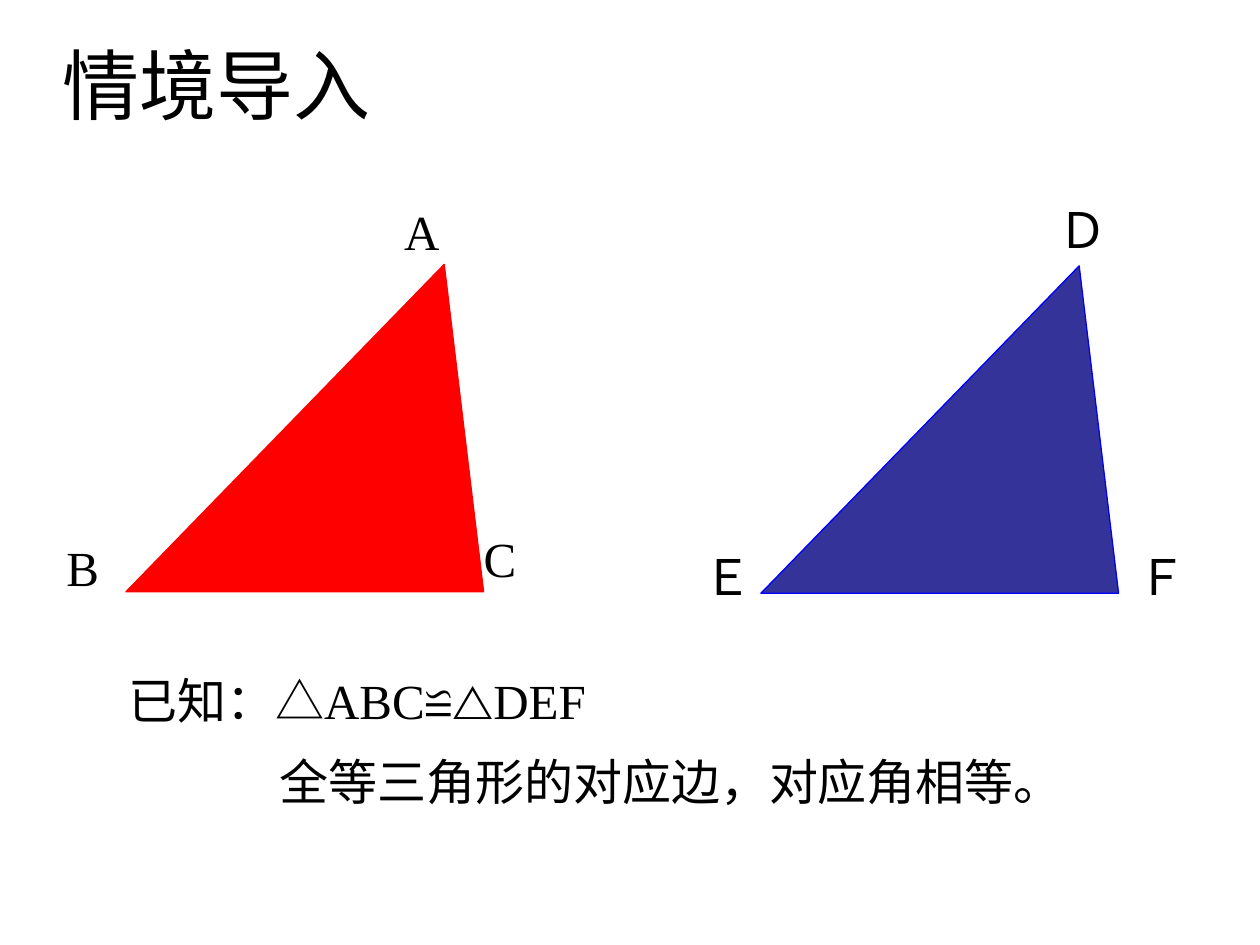
"""Build the lesson-opening slide on the congruent triangles ABC and DEF."""
from pptx import Presentation
from pptx import util as u
from pptx.dml.color import RGBColor
from pptx.enum import shapes, text

BLACK = RGBColor(0x00, 0x00, 0x00)
RED = RGBColor(0xFF, 0x00, 0x00)
INDIGO = RGBColor(0x33, 0x33, 0x99)
BLUE = RGBColor(0x00, 0x00, 0xFF)
SERIF = "Times New Roman"
SANS = "Noto Sans CJK SC"


def style(font, name, size=28):
    font.name = name
    font.size = u.Pt(size)
    font.color.rgb = BLACK


def add_text(parent, left, top, width, height, wrap):
    box = parent.add_textbox(u.Cm(left), u.Cm(top), u.Cm(width), u.Cm(height))
    frame = box.text_frame
    frame.word_wrap = wrap
    frame.auto_size = text.MSO_AUTO_SIZE.SHAPE_TO_FIT_TEXT
    return frame


deck = Presentation()
deck.slide_width, deck.slide_height = u.Cm(25.4), u.Cm(19.05)
slide = deck.slides.add_slide(deck.slide_layouts[5])

title = slide.shapes.title
title.left, title.top = u.Cm(0.53), u.Cm(0.56)
title.width, title.height = u.Cm(7.67), u.Cm(2.26)
title.text_frame.text = "情境导入"
title.text_frame.auto_size = text.MSO_AUTO_SIZE.NONE
title.text_frame.vertical_anchor = text.MSO_ANCHOR.MIDDLE
heading = title.text_frame.paragraphs[0]
heading.alignment = text.PP_ALIGN.CENTER
style(heading.font, SANS, 44)

figures = [
    (slide.shapes, 2.54, 5.33, RED, RED,
     [("A", 7.9, 3.94, 1.24), ("B", 1.09, 10.72, 1.17), ("C", 9.5, 10.52, 1.17)]),
    (slide.shapes.add_group_shape().shapes, 15.34, 5.36, INDIGO, BLUE,
     [("Ｄ", 21.08, 3.89, 1.52), ("Ｅ", 13.94, 10.9, 1.52), ("Ｆ", 22.68, 10.9, 1.52)]),
]
for parent, left, top, fill, outline, vertices in figures:
    triangle = parent.add_shape(shapes.MSO_SHAPE.ISOSCELES_TRIANGLE,
                                u.Cm(left), u.Cm(top), u.Cm(7.21), u.Cm(6.6))
    triangle.adjustments[0] = 0.89
    triangle.shadow.inherit = False
    triangle.fill.solid()
    triangle.fill.fore_color.rgb = fill
    triangle.line.color.rgb = outline
    triangle.line.width = u.Pt(0.75)
    for letter, x, y, width in vertices:
        vertex = add_text(parent, x, y, width, 1.45, False)
        vertex.text = letter
        style(vertex.paragraphs[0].font, SERIF)

given = add_text(slide.shapes, 2.59, 13.51, 13.21, 1.19, True)
for part, font_name in (("已知：", SANS), ("△ABC≌△DEF", SERIF)):
    run = given.paragraphs[0].add_run()
    run.text = part
    style(run.font, font_name)

conclusion = add_text(slide.shapes, 5.64, 15.16, 18.52, 1.19, True)
conclusion.text = "全等三角形的对应边，对应角相等。"
conclusion.paragraphs[0].alignment = text.PP_ALIGN.JUSTIFY
style(conclusion.paragraphs[0].font, "Arial")

for statement in (given, conclusion):
    statement.margin_left = statement.margin_right = 0
    statement.margin_top = statement.margin_bottom = 0

deck.save("out.pptx")
